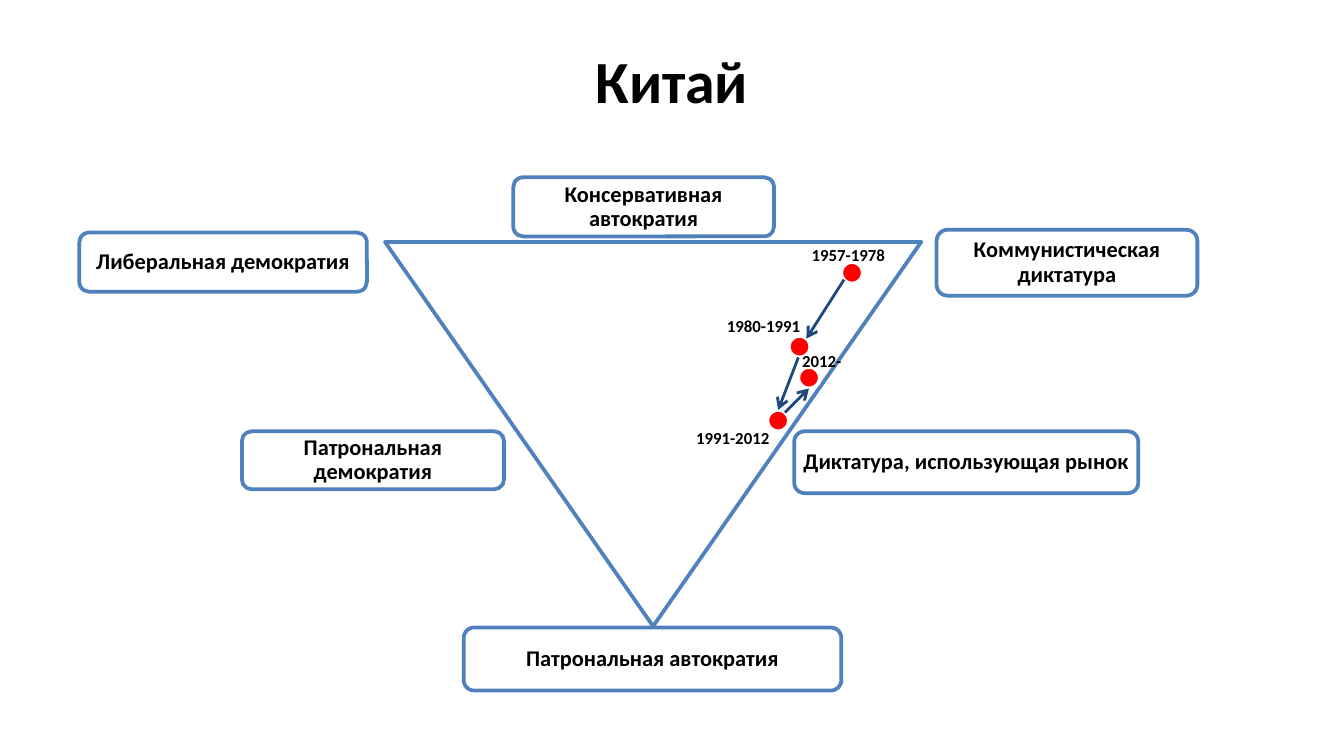
from lxml import etree
from pptx import Presentation
from pptx.dml.color import RGBColor
from pptx.enum.shapes import MSO_CONNECTOR, MSO_SHAPE
from pptx.enum.text import MSO_ANCHOR, PP_ALIGN
from pptx.oxml.ns import qn
from pptx.util import Pt

TRIANGLE = MSO_SHAPE.ISOSCELES_TRIANGLE
ROUNDED = MSO_SHAPE.ROUNDED_RECTANGLE
OVAL = MSO_SHAPE.OVAL
STRAIGHT = MSO_CONNECTOR.STRAIGHT
MIDDLE, TOP = MSO_ANCHOR.MIDDLE, MSO_ANCHOR.TOP
CENTER, LEFT = PP_ALIGN.CENTER, PP_ALIGN.LEFT

FONT = "Calibri"
COLORS = {
    "text": "000000",
    "white": "FFFFFF",
    "outline": "4F81BD",
    "dot": "FF0000",
    "arrow": "1F497D",
}
DOT_SIZE = 11.5

# Regime types: text, left, top, width, height
REGIMES = [
    ("Кoммунистическая диктатура", 501.8, 123.1, 139.7, 35.3),
    ("Либеральная демократия", 42.5, 124.6, 154.1, 31.7),
    ("Патрональная автократия", 248.4, 336.2, 202.3, 33.8),
    ("Консервативная aвтократия", 275, 95, 139.7, 31.7),
    ("Диктатура, использующая рынок", 425.5, 231.1, 184.3, 33.1),
    ("Патрональная демократия", 129.6, 231.1, 140.4, 31),
]
# Periods: text, label left and top, dot left and top
PERIODS = [
    ("1957-1978", 427.7, 127.4, 450.7, 140.4),
    ("1980-1991", 382.3, 165.6, 422.6, 180),
    ("1991-2012", 365.8, 225.4, 411.1, 219.6),
    ("2012-", 422.6, 184.3, 427.7, 196.6),
]
# Moves between periods: start x, y, end x, y
MOVES = [
    (452.2, 149.8, 432, 181.4),
    (427.7, 191.5, 416.9, 219.6),
    (420.5, 221, 433.4, 208.1),
]


def color(name):
    return RGBColor.from_string(COLORS[name])


def write_text(shape, text, size=12, align=CENTER, anchor=MIDDLE,
               inset=(7.2, 3.6), spacing=1.0):
    frame = shape.text_frame
    frame.word_wrap = True
    frame.vertical_anchor = anchor
    frame.margin_left = frame.margin_right = Pt(inset[0])
    frame.margin_top = frame.margin_bottom = Pt(inset[1])
    paragraph = frame.paragraphs[0]
    paragraph.alignment = align
    paragraph.line_spacing = spacing
    run = paragraph.add_run()
    run.text = text
    run.font.name = FONT
    run.font.size = Pt(size)
    run.font.bold = True
    run.font.color.rgb = color("text")


def add_outlined(slide, kind, left, top, width, height, fill=None, line="outline"):
    shape = slide.shapes.add_shape(kind, Pt(left), Pt(top), Pt(width), Pt(height))
    shape.shadow.inherit = False
    if fill:
        shape.fill.solid()
        shape.fill.fore_color.rgb = color(fill)
    else:
        shape.fill.background()
    shape.line.color.rgb = color(line)
    shape.line.width = Pt(2)
    return shape


def add_regime(slide, text, left, top, width, height):
    box = add_outlined(slide, ROUNDED, left, top, width, height, fill="white")
    fill_color = box.fill._xPr.find(qn("a:solidFill"))[0]
    etree.SubElement(fill_color, qn("a:alpha"), val="90000")
    write_text(box, text, inset=(2, 2), spacing=0.9)


def add_arrow(slide, start_x, start_y, end_x, end_y):
    arrow = slide.shapes.add_connector(
        STRAIGHT, Pt(start_x), Pt(start_y), Pt(end_x), Pt(end_y))
    arrow.line.color.rgb = color("arrow")
    arrow.line.width = Pt(1.5)
    etree.SubElement(arrow.line._get_or_add_ln(), qn("a:tailEnd"), type="arrow")
    etree.SubElement(arrow._element.spPr, qn("a:effectLst"))


def add_label(slide, text, left, top):
    label = slide.shapes.add_textbox(Pt(left), Pt(top), Pt(73.4), Pt(18))
    write_text(label, text, size=9, align=LEFT, anchor=TOP)


def add_title(slide, text):
    title = slide.shapes.title
    title.left, title.top = Pt(0), Pt(15.1)
    title.width, title.height = Pt(720), Pt(55.4)
    write_text(title, text, size=32)


def main():
    presentation = Presentation()
    presentation.slide_width, presentation.slide_height = Pt(720), Pt(405)
    slide = presentation.slides.add_slide(presentation.slide_layouts[5])
    add_title(slide, "Китай")

    # Triangle of regimes, pointing down
    triangle = add_outlined(slide, TRIANGLE, 206.2, 129.6, 287.3, 205.9)
    triangle.rotation = 180
    for regime in REGIMES:
        add_regime(slide, *regime)

    # Path of the country: dots, arrows, then dates
    for _, _, _, left, top in PERIODS:
        add_outlined(slide, OVAL, left, top, DOT_SIZE, DOT_SIZE,
                     fill="dot", line="white")
    for move in MOVES:
        add_arrow(slide, *move)
    for text, left, top, _, _ in PERIODS:
        add_label(slide, text, left, top)

    presentation.save("out.pptx")


if __name__ == "__main__":
    main()
